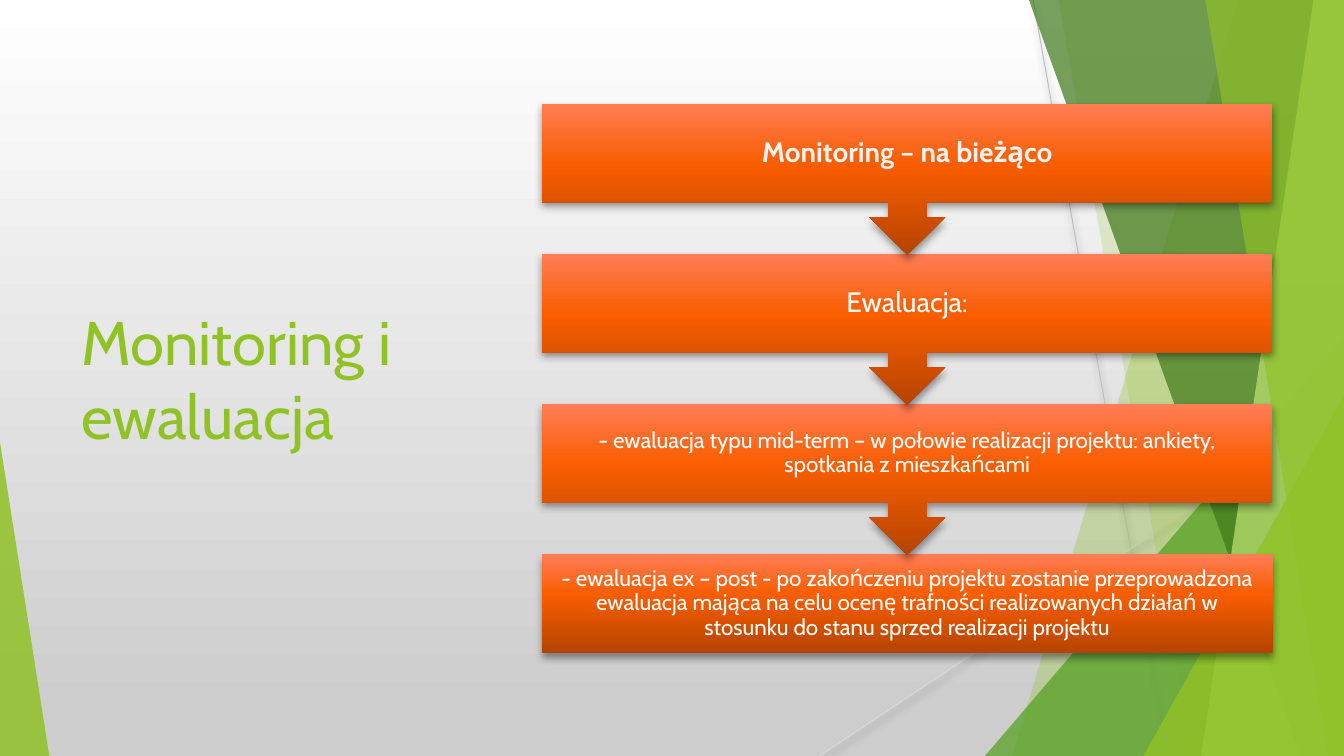
import pptx
import pptx.dml.color
import pptx.enum.shapes
import pptx.enum.text
import pptx.oxml
import pptx.oxml.ns
import pptx.util
from copy import deepcopy
from lxml import etree

PX = 9525  # EMU per px
WIDTH, HEIGHT = 1280, 720
FONT = "Cabin"
GREEN = "90C226"
SHAPE = pptx.enum.shapes.MSO_SHAPE
ALIGN = pptx.enum.text.PP_ALIGN
qn = pptx.oxml.ns.qn


def px(*lengths):
    return [pptx.util.Emu(n * PX) for n in lengths]


def rgb(hex_color):
    return pptx.dml.color.RGBColor.from_string(hex_color)


def set_gradient(fill, element, stops, angle):
    """Fill with (percent, colour) stops; angle is counterclockwise."""
    fill.gradient()
    fill.gradient_angle = angle
    stop_list = next(element.iter(qn("a:gsLst")))
    for _ in stops[2:]:
        stop_list.append(deepcopy(stop_list[0]))
    for stop, (percent, color) in zip(fill.gradient_stops, stops):
        stop.position = percent / 100
        stop.color.rgb = rgb(color)


def add_shadow(sp):
    sp_pr = sp._element.spPr
    effects = sp_pr.find(qn("a:effectLst"))
    if effects is None:
        effects = etree.SubElement(sp_pr, qn("a:effectLst"))
    shadow = etree.SubElement(effects, qn("a:outerShdw"), blurRad="66040",
                              dist="38100", dir="5400000", rotWithShape="0")
    color = etree.SubElement(shadow, qn("a:srgbClr"), val="000000")
    etree.SubElement(color, qn("a:alpha"), val="40000")


def set_facet_fill(sp, color, opacity):
    sp.shadow.inherit = False
    sp.fill.solid()
    sp.fill.fore_color.rgb = rgb(color)
    sp.line.fill.background()
    color_node = next(sp._element.spPr.iter(qn("a:srgbClr")))
    etree.SubElement(color_node, qn("a:alpha"), val=str(opacity * 1000))


def set_text(sp, text, size, color, inset=None, bold=False, align=None, spacing=None):
    tf = sp.text_frame
    tf.word_wrap = True
    tf.vertical_anchor = pptx.enum.text.MSO_ANCHOR.MIDDLE
    if inset is not None:
        tf.margin_left, tf.margin_top, tf.margin_right, tf.margin_bottom = px(*[inset] * 4)
    p = tf.paragraphs[0]
    p.text = text
    p.alignment = align
    p.line_spacing = spacing
    p.font.name = FONT
    p.font.size = pptx.util.Pt(size)
    p.font.bold = bold
    p.font.color.rgb = rgb(color)


def add_thin_line(slide, x1, y1, x2, y2, color):
    line = slide.shapes.add_connector(
        pptx.enum.shapes.MSO_CONNECTOR.STRAIGHT, *px(x1, y1, x2, y2))
    line.line.color.rgb = rgb(color)
    line.line.width = pptx.util.Pt(0.75)
    add_shadow(line)


def add_band(slide, top_x, bottom_x, color, opacity):
    """Full-height facet from a slanted left edge to the slide's right edge."""
    builder = slide.shapes.build_freeform(*px(top_x, 0), scale=1.0)
    corners = [(WIDTH, 0), (WIDTH, HEIGHT), (bottom_x, HEIGHT)]
    builder.add_line_segments([px(*corner) for corner in corners], close=True)
    set_facet_fill(builder.convert_to_shape(), color, opacity)


def add_corner(slide, x, y, width, apex, color, opacity):
    """Triangle standing on the bottom edge; apex 0 is left, 1 is right."""
    sp = slide.shapes.add_shape(SHAPE.ISOSCELES_TRIANGLE, *px(x, y, width, HEIGHT - y))
    sp.adjustments[0] = apex
    set_facet_fill(sp, color, opacity)


def add_backdrop(slide):
    set_gradient(slide.background.fill, slide._element,
                 [(0, "FFFFFF"), (94, "CDCDCD")], 270)
    add_thin_line(slide, 984, 0, 1112, HEIGHT, "BFBFBF")
    add_thin_line(slide, WIDTH, 387, 780, HEIGHT, "D9D9D9")
    add_band(slide, 1179, 964, GREEN, 30)
    add_band(slide, 1008, 1136, GREEN, 20)
    add_corner(slide, 938, 320, 342, 1, "54A021", 72)
    add_band(slide, 980, 1239, "3F7819", 70)
    add_band(slide, 1251, 1144, "C0E474", 70)
    add_band(slide, 1148, 1265, GREEN, 65)
    add_corner(slide, 1089, 377, 191, 1, GREEN, 80)
    add_corner(slide, 0, 421, 47, 0, GREEN, 85)


def add_title(slide, x, y, width, height):
    sp = slide.shapes.add_textbox(*px(x, y, width, height))
    set_text(sp, "Monitoring i ewaluacja", 44, GREEN)


def add_steps(slide, x, y, width, height):
    # text, size, colour, inset, bold
    steps = [
        ("Monitoring – na bieżąco", 20, "F2F2F2", 15, True),
        ("Ewaluacja:", 20, "FFFFFF", 15, False),
        ("- ewaluacja typu mid-term – w połowie realizacji projektu: ankiety, "
         "spotkania z mieszkańcami", 16, "FFFFFF", 12, False),
        ("- ewaluacja ex – post - po zakończeniu projektu zostanie przeprowadzona "
         "ewaluacja mająca na celu ocenę trafności realizowanych działań w stosunku "
         "do stanu sprzed realizacji projektu", 16, "FFFFFF", 12, False),
    ]
    box_height = 94
    pitch = (height - box_height) // (len(steps) - 1)
    # Bottom step first, so that each arrow tip lies over the next step
    for i, step in reversed(list(enumerate(steps))):
        if i == len(steps) - 1:
            kind, step_height = SHAPE.RECTANGLE, box_height
        else:
            kind, step_height = SHAPE.DOWN_ARROW_CALLOUT, pitch + 1
        sp = slide.shapes.add_shape(kind, *px(x, y + i * pitch, width, step_height))
        sp.shadow.inherit = False
        set_gradient(sp.fill, sp._element,
                     [(0, "B44400"), (60, "F95E00"), (100, "FF7D56")], 90)
        sp.line.fill.background()
        add_shadow(sp)
        set_text(sp, *step, align=ALIGN.CENTER, spacing=0.9)


def main():
    prs = pptx.Presentation()
    prs.slide_width, prs.slide_height = px(WIDTH, HEIGHT)
    slide = prs.slides.add_slide(prs.slide_layouts[6])
    add_backdrop(slide)
    add_title(slide, 68, 145, 372, 430)
    add_steps(slide, 516, 99, 696, 523)
    prs.save("out.pptx")


if __name__ == "__main__":
    main()
